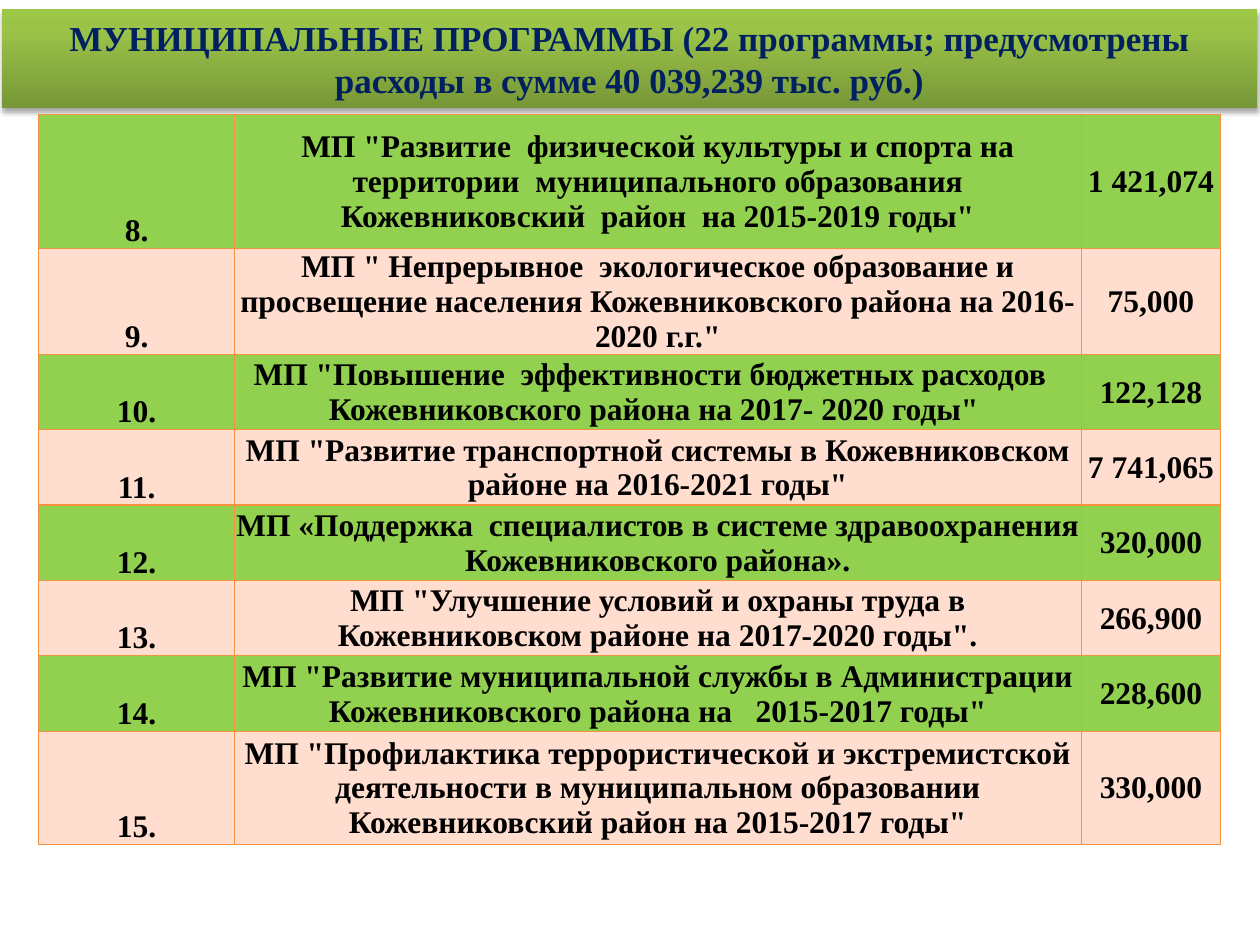
import copy

import pptx
import pptx.dml.color
import pptx.enum.text
import pptx.oxml
import pptx.oxml.ns
import pptx.util

Pt = pptx.util.Pt
qn = pptx.oxml.ns.qn
ANCHOR = pptx.enum.text.MSO_ANCHOR
NS = pptx.oxml.ns.nsdecls("a")

PROGRAMS = [
    ("8.", 'МП "Развитие  физической культуры и спорта на территории  муниципального '
           'образования Кожевниковский  район  на 2015-2019 годы"', "1 421,074"),
    ("9.", 'МП " Непрерывное  экологическое образование и просвещение населения '
           'Кожевниковского района на 2016-2020 г.г."', "75,000"),
    ("10.", 'МП "Повышение  эффективности бюджетных расходов   '
            'Кожевниковского района на 2017- 2020 годы" ', "122,128"),
    ("11.", 'МП "Развитие транспортной системы в Кожевниковском районе '
            'на 2016-2021 годы"', "7 741,065"),
    ("12.", 'МП «Поддержка  специалистов в системе здравоохранения '
            'Кожевниковского района».', "320,000"),
    ("13.", 'МП "Улучшение условий и охраны труда в Кожевниковском районе '
            'на 2017-2020 годы".', "266,900"),
    ("14.", 'МП "Развитие муниципальной службы в Администрации '
            'Кожевниковского района на   2015-2017 годы"', "228,600"),
    ("15.", 'МП "Профилактика террористической и экстремистской деятельности в '
            'муниципальном образовании Кожевниковский район на 2015-2017 годы"', "330,000"),
]


def color(hex_value):
    return pptx.dml.color.RGBColor.from_string(hex_value)


class ProgramSlide:
    font = "Times New Roman"
    navy, black = "002060", "000000"
    bands = ("92D050", "FFDDCF")
    border = "F69240"
    gradient = ((0, "779737"), (0.8, "9BC348"), (1, "9DC746"))

    def __init__(self, deck):
        self.slide = deck.slides.add_slide(deck.slide_layouts[5])

    def add_text(self, frame, text, size, text_color):
        paragraph = frame.paragraphs[0]
        paragraph.alignment = pptx.enum.text.PP_ALIGN.CENTER
        run = paragraph.add_run()
        run.text = text
        run.font.name, run.font.size, run.font.bold = self.font, Pt(size), True
        run.font.color.rgb = color(text_color)

    def add_title(self, text, left, top, width, height):
        banner = self.slide.shapes.title
        banner.left, banner.top = Pt(left), Pt(top)
        banner.width, banner.height = Pt(width), Pt(height)
        frame = banner.text_frame
        frame.word_wrap = True
        frame.auto_size = pptx.enum.text.MSO_AUTO_SIZE.NONE
        frame.vertical_anchor = ANCHOR.MIDDLE
        self.add_text(frame, text, 20, self.navy)

        # Gradient from dark at the bottom to light at the top
        banner.fill.gradient()
        banner.fill.gradient_angle = 90
        properties = banner._element.spPr
        stops = properties.find(".//" + qn("a:gsLst"))
        stops.append(copy.deepcopy(stops[-1]))
        for stop, (position, shade) in zip(banner.fill.gradient_stops, self.gradient):
            stop.position = position
            stop.color.rgb = color(shade)

        # Soft shadow below the banner
        properties.append(pptx.oxml.parse_xml(
            f'<a:effectLst {NS}><a:outerShdw blurRad="{Pt(3.1)}" dist="{Pt(1.8)}" '
            f'dir="5400000" rotWithShape="0"><a:srgbClr val="{self.black}">'
            '<a:alpha val="35000"/></a:srgbClr></a:outerShdw></a:effectLst>'))

    def add_table(self, rows, left, top, widths, heights):
        table = self.slide.shapes.add_table(
            len(rows), len(widths), Pt(left), Pt(top),
            Pt(sum(widths)), Pt(sum(heights))).table
        for column, width in zip(table.columns, widths):
            column.width = Pt(width)
        for i, (values, height) in enumerate(zip(rows, heights)):
            table.rows[i].height = Pt(height)
            for j, value in enumerate(values):
                self.fill_cell(table.cell(i, j), value, self.bands[i % 2],
                               ANCHOR.MIDDLE if j else ANCHOR.BOTTOM)

    def fill_cell(self, cell, text, band, anchor):
        cell.margin_left = cell.margin_right = cell.margin_top = Pt(0.7)
        cell.margin_bottom = 0
        cell.vertical_anchor = anchor
        self.add_text(cell.text_frame, text, 18, self.black)
        for side in ("lnL", "lnR", "lnT", "lnB"):
            cell._tc.get_or_add_tcPr().append(pptx.oxml.parse_xml(
                f'<a:{side} {NS} w="{Pt(0.75)}"><a:solidFill>'
                f'<a:srgbClr val="{self.border}"/></a:solidFill></a:{side}>'))
        cell.fill.solid()
        cell.fill.fore_color.rgb = color(band)


def main():
    deck = pptx.Presentation()
    deck.slide_width, deck.slide_height = Pt(720), Pt(540)
    page = ProgramSlide(deck)

    # Programme list: number, name, amount
    page.add_table(PROGRAMS, 22.2, 65.4, (111.8, 483.8, 79.8),
                   (76.5, *[43.1] * 6, 64.6))

    # Heading banner
    page.add_title("МУНИЦИПАЛЬНЫЕ ПРОГРАММЫ (22 программы; предусмотрены "
                   "расходы в сумме 40 039,239 тыс. руб.)", 1, 5.2, 717.4, 56.6)
    deck.save("out.pptx")


if __name__ == "__main__":
    main()
